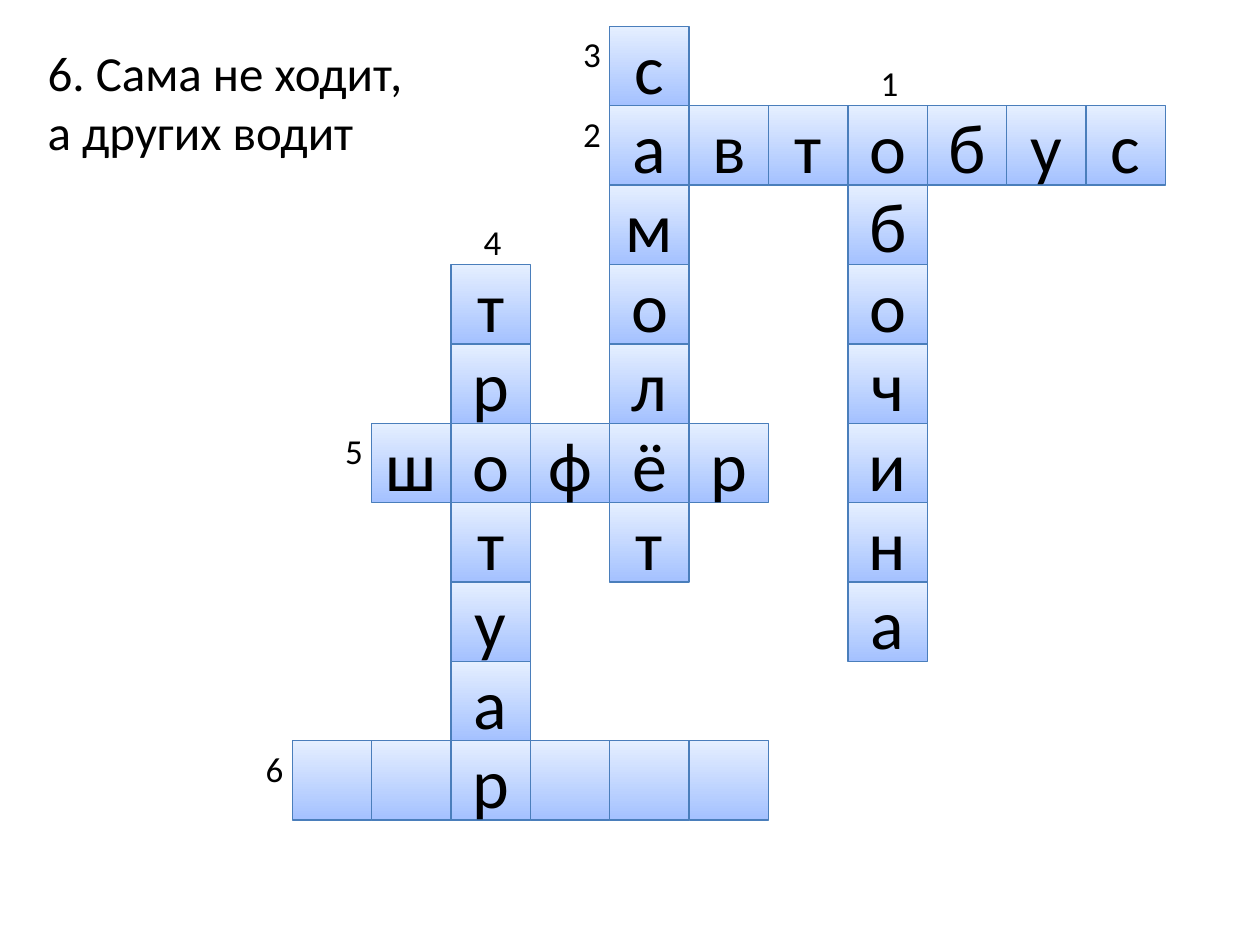
from dataclasses import dataclass

from pptx import Presentation
from pptx.dml.color import RGBColor
from pptx.enum.shapes import MSO_SHAPE
from pptx.enum.text import MSO_ANCHOR, MSO_AUTO_SIZE, PP_ALIGN
from pptx.util import Inches, Pt


@dataclass(frozen=True)
class Theme:
    """Hold the colours and type sizes of the slide."""
    font: str = "Calibri"
    ink: str = "000000"
    edge: str = "4A7EBB"
    grad: tuple = ("A4C1FF", "E5EFFF")
    line: float = 0.75
    cell: int = 40
    mark: int = 20
    clue: int = 28


LOOK = Theme()
LEFT, TOP, SIDE = 2.32, 0.21, 0.63
WORDS = [
    ("самолёт", 4, 0, "down"),
    ("автобус", 4, 1, "across"),
    ("обочина", 7, 1, "down"),
    ("тротуар", 2, 3, "down"),
    ("шофёр", 1, 5, "across"),
    ("  р   ", 0, 9, "across"),
]
MARKS = [
    ("3", 4.53, 0.21),
    ("2", 4.53, 0.84),
    ("1", 6.89, 0.44),
    ("4", 3.74, 1.7),
    ("5", 2.64, 3.36),
    ("6", 2.01, 5.88),
]
CLUE = "6. Сама не ходит, а других водит"


def apply(item, form):
    """Set each attribute named in form on item."""
    for name, value in form.items():
        setattr(item, name, value)


def write(shape, text, size, align, frame):
    """Put one styled line of text in a shape."""
    body = shape.text_frame
    apply(body, frame)
    para = body.paragraphs[0]
    para.alignment = align
    run = para.add_run()
    run.text = text
    apply(run.font, {"name": LOOK.font, "size": Pt(size)})
    run.font.color.rgb = RGBColor.from_string(LOOK.ink)


def add_cell(slide, col, row, char):
    """Draw one square of the crossword."""
    x, y = LEFT + col * SIDE, TOP + row * SIDE
    cell = slide.shapes.add_shape(
        MSO_SHAPE.RECTANGLE, Inches(x), Inches(y), Inches(SIDE), Inches(SIDE))
    cell.shadow.inherit = False
    cell.fill.gradient()
    cell.fill.gradient_angle = 90
    for stop, tone in zip(cell.fill.gradient_stops, LOOK.grad):
        stop.color.rgb = RGBColor.from_string(tone)
    cell.line.color.rgb = RGBColor.from_string(LOOK.edge)
    cell.line.width = Pt(LOOK.line)
    if char.strip():
        write(cell, char, LOOK.cell, PP_ALIGN.CENTER,
              {"vertical_anchor": MSO_ANCHOR.MIDDLE, "word_wrap": True})


def add_text(slide, text, box, size, wrap):
    """Place a text box that fits its words."""
    shape = slide.shapes.add_textbox(*map(Inches, box))
    write(shape, text, size, PP_ALIGN.LEFT,
          {"word_wrap": wrap, "auto_size": MSO_AUTO_SIZE.SHAPE_TO_FIT_TEXT})


def lay_grid():
    """Map each square to its letter, with crossings shared."""
    grid = {}
    for word, col, row, way in WORDS:
        for step, char in enumerate(word):
            spot = (col + step, row) if way == "across" else (col, row + step)
            grid[spot] = char
    return grid


def main():
    """Build the crossword slide and save it."""
    deck = Presentation()
    apply(deck, {"slide_width": Inches(10), "slide_height": Inches(7.5)})
    slide = deck.slides.add_slide(deck.slide_layouts[6])
    for (col, row), char in lay_grid().items():
        add_cell(slide, col, row, char)
    for text, x, y in MARKS:
        add_text(slide, text, (x, y, 0.34, 0.43), LOOK.mark, False)
    add_text(slide, CLUE, (0.28, 0.29, 3.23, 1.03), LOOK.clue, True)
    deck.save("out.pptx")


if __name__ == "__main__":
    main()
